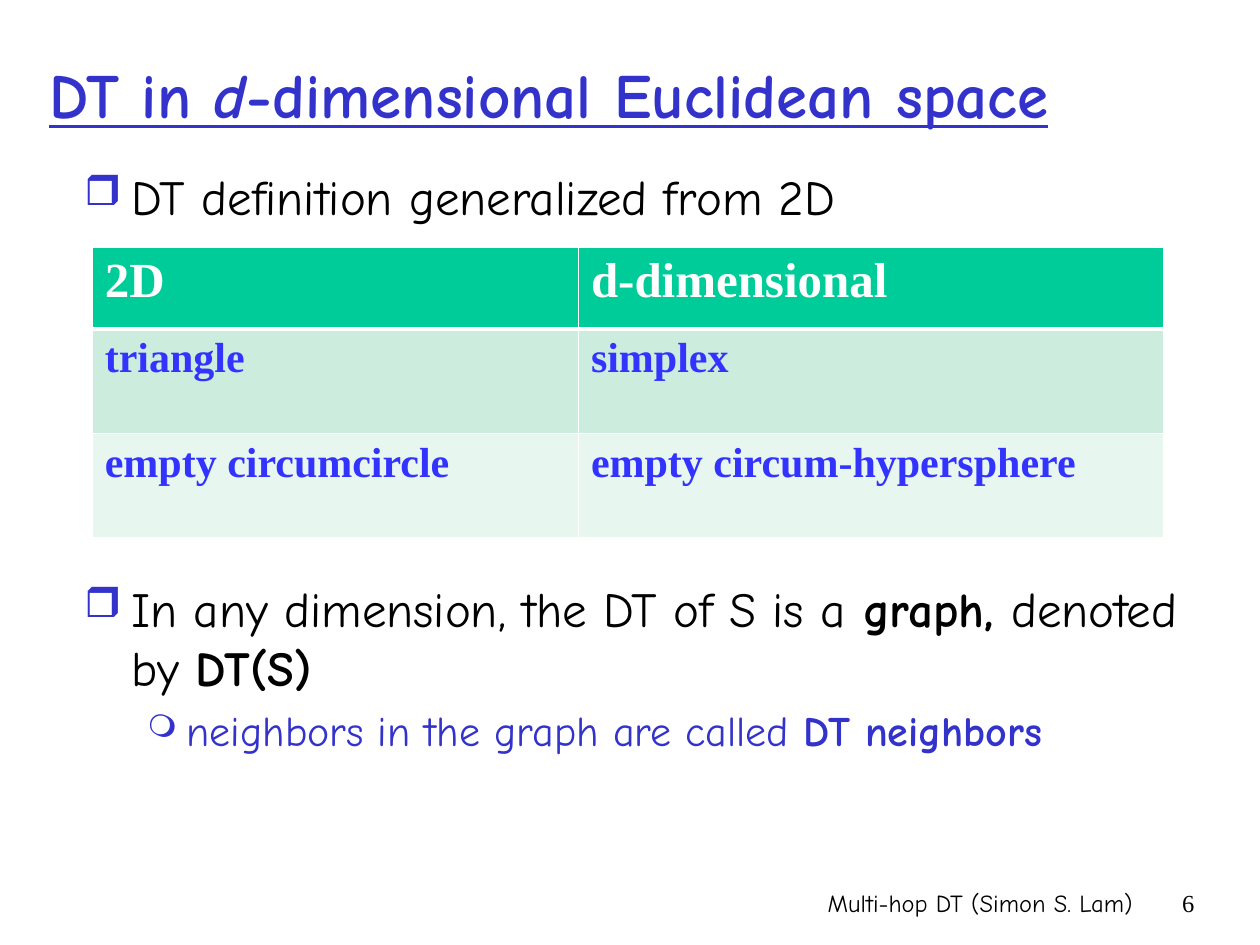
from pptx import Presentation
from pptx.dml.color import RGBColor as Rgb
from pptx.enum.text import MSO_ANCHOR as Anchor, PP_ALIGN as Align
from pptx.oxml import parse_xml
from pptx.oxml.ns import nsdecls
from pptx.util import Cm, Pt

COLORS = {
    "blue": "3333CC", "bright": "3333FF", "black": "000000", "white": "FFFFFF",
    "header": "00CC99", "band": "CCECDE", "pale": "E7F6EF",
}
COMIC, TIMES = "Comic Neue", "Times New Roman"


def add_spans(para, texts, font, size, color, **formats):
    for text, extra in texts:
        span = para.add_run()
        span.text = text
        span.font.color.rgb = Rgb.from_string(COLORS[color])
        values = {"name": font, "size": Pt(size), "bold": False, **formats, **extra}
        for name, value in values.items():
            setattr(span.font, name, value)


def add_box(left, top, width, height, anchor=Anchor.TOP):
    box = page.shapes.add_textbox(Cm(left), Cm(top), Cm(width), Cm(height))
    box.text_frame.word_wrap = True
    box.text_frame.vertical_anchor = anchor
    return box.text_frame


deck = Presentation()
deck.slide_width, deck.slide_height = Cm(25.4), Cm(19.05)
page = deck.slides.add_slide(deck.slide_layouts[6])

title = add_box(0.74, 0.64, 24.66, 2.49, Anchor.MIDDLE)
add_spans(
    title.paragraphs[0],
    [("DT in ", {}), ("d", {"italic": True}), ("-dimensional Euclidean space", {})],
    COMIC, 36, "blue", bold=True, underline=True,
)

strong = {"bold": True}
bullets = [
    ("❒", 85, 0.95, 0.95, 5.6, 28, "black",
     [("DT definition generalized from 2D", {})]),
    ("❒", 85, 0.95, 0.95, 202, 28, "black",
     [("In any dimension, the DT of S is a", {}), (" graph, ", strong),
      ("denoted by ", {}), ("DT(S)", strong)]),
    ("❍", 75, 2.06, 0.79, 4.8, 24, "blue",
     [("neighbors in the graph are called ", {}), ("DT neighbors", strong)]),
]
body = add_box(1.45, 3.23, 22.99, 13.5)
for index, (mark, scale, indent, hang, gap, size, color, texts) in enumerate(bullets):
    para = body.paragraphs[0] if index == 0 else body.add_paragraph()
    para.space_before = Pt(gap)
    add_spans(para, texts, COMIC, size, color)
    settings = para._p.get_or_add_pPr()
    settings.set("marL", str(Cm(indent)))
    settings.set("indent", str(-Cm(hang)))
    for xml in (
        f'<a:buClr {nsdecls("a")}><a:srgbClr val="{COLORS["blue"]}"/></a:buClr>',
        f'<a:buSzPct {nsdecls("a")} val="{scale * 1000}"/>',
        f'<a:buChar {nsdecls("a")} char="{mark}"/>',
    ):
        settings.append(parse_xml(xml))

for left, width, text, font in [
    (6.63, 16.46, "Multi-hop DT (Simon S. Lam)", COMIC),
    (23.06, 1.27, "6", TIMES),
]:
    para = add_box(left, 17.78, width, 1.27).paragraphs[0]
    para.alignment = Align.RIGHT
    add_spans(para, [(text, {})], font, 14, "black")

rows = [
    (1.65, 28, "white", "header", ["2D", "d-dimensional"]),
    (2.11, 24, "bright", "band", ["triangle", "simplex"]),
    (2.11, 24, "bright", "pale", ["empty circumcircle", "empty circum-hypersphere"]),
]
widths = [9.8, 11.8]
table = page.shapes.add_table(
    len(rows), len(widths), Cm(1.86), Cm(4.98),
    Cm(sum(widths)), Cm(sum(row[0] for row in rows)),
).table
table.first_row = table.horz_banding = False
for column, width in zip(table.columns, widths):
    column.width = Cm(width)
for r, (height, size, color, fill, texts) in enumerate(rows):
    table.rows[r].height = Cm(height)
    for c, text in enumerate(texts):
        cell = table.cell(r, c)
        cell.fill.solid()
        cell.fill.fore_color.rgb = Rgb.from_string(COLORS[fill])
        add_spans(cell.text_frame.paragraphs[0], [(text, {})], TIMES, size, color, bold=True)
        for position, side in enumerate("LRTB"):
            thick = (r, side) in [(0, "B"), (1, "T")]
            cell._tc.get_or_add_tcPr().insert(position, parse_xml(
                f'<a:ln{side} {nsdecls("a")} w="{Pt(3 if thick else 1)}"><a:solidFill>'
                f'<a:srgbClr val="{COLORS["white"]}"/></a:solidFill></a:ln{side}>'
            ))

deck.save("out.pptx")
